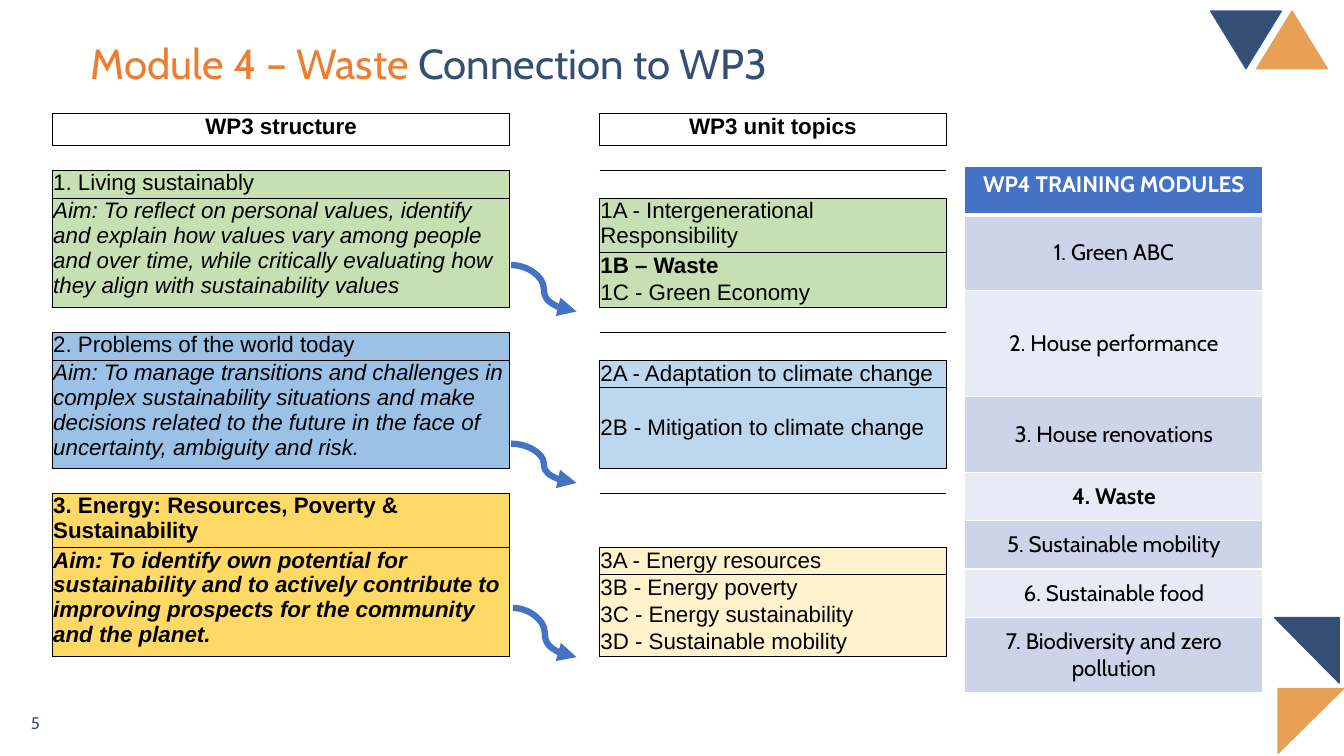
from lxml import etree
from pptx import Presentation
from pptx.dml.color import RGBColor
from pptx.enum.shapes import MSO_CONNECTOR, MSO_SHAPE
from pptx.enum.text import MSO_ANCHOR, PP_ALIGN
from pptx.oxml.ns import qn
from pptx.util import Cm, Pt

CURVE = MSO_CONNECTOR.CURVE
TRIANGLE = MSO_SHAPE.ISOSCELES_TRIANGLE
TOP, MIDDLE = MSO_ANCHOR.TOP, MSO_ANCHOR.MIDDLE
LEFT, CENTER = PP_ALIGN.LEFT, PP_ALIGN.CENTER

NAVY = RGBColor(0x35, 0x4F, 0x74)
TITLE_NAVY = RGBColor(0x34, 0x4F, 0x74)
EDGE_NAVY = RGBColor(0x31, 0x53, 0x8F)
SAND = RGBColor(0xE8, 0x9F, 0x56)
ORANGE = RGBColor(0xED, 0x7D, 0x31)
BLUE = RGBColor(0x44, 0x72, 0xC4)
GREEN = RGBColor(0xC6, 0xE0, 0xB4)
SKY = RGBColor(0x9B, 0xC2, 0xE6)
PALE_SKY = RGBColor(0xBD, 0xD7, 0xEE)
GOLD = RGBColor(0xFF, 0xD9, 0x66)
CREAM = RGBColor(0xFF, 0xF2, 0xCC)
BAND_DARK = RGBColor(0xCD, 0xD4, 0xEA)
BAND_LIGHT = RGBColor(0xE8, 0xEB, 0xF5)
BLACK = RGBColor(0, 0, 0)
WHITE = RGBColor(0xFF, 0xFF, 0xFF)

PLAIN_TABLE_STYLE = "{2D5ABB26-0587-4C30-8999-92F81FD0307C}"

# Each unit: heading, its height, aim, colours of aim and topics, bold, topics with heights
UNITS = [
    ("1. Living sustainably", 0.71,
     "Aim: To reflect on personal values, identify and explain how values vary among people "
     "and over time, while critically evaluating how they align with sustainability values",
     GREEN, GREEN, False,
     [("1A - Intergenerational Responsibility", 1.28), ("1B – Waste", 0.65),
      ("1C - Green Economy", 0.65)]),
    ("2. Problems of the world today", 0.71,
     "Aim: To manage transitions and challenges in complex sustainability situations and make "
     "decisions related to the future in the face of uncertainty, ambiguity and risk.",
     SKY, PALE_SKY, False,
     [("2A - Adaptation to climate change", 0.66), ("2B - Mitigation to climate change", 1.88)]),
    ("3. Energy: Resources, Poverty & Sustainability", 1.3,
     "Aim: To identify own potential for sustainability and to actively contribute to "
     "improving prospects for the community and the planet.",
     GOLD, CREAM, True,
     [("3A - Energy resources", 0.66), ("3B - Energy poverty", 0.66),
      ("3C - Energy sustainability", 0.66), ("3D - Sustainable mobility", 0.66)]),
]
MODULES = [
    ("1. Green ABC", 1.9), ("2. House performance", 2.69), ("3. House renovations", 1.9),
    ("4. Waste", 1.22), ("5. Sustainable mobility", 1.22), ("6. Sustainable food", 1.22),
    ("7. Biodiversity and zero pollution", 1.9),
]


def write(para, text, *, font="Arial", size=16, color=BLACK, bold=False, italic=False,
          align=LEFT):
    """Add one formatted span of text to a paragraph."""
    para.alignment = align
    span = para.add_run()
    span.text = text
    span.font.name = font
    span.font.size = Pt(size)
    span.font.color.rgb = color
    span.font.bold = bold
    span.font.italic = italic


class SlideBuilder:
    """Holds the font of the template and the page being built."""

    font = "Cabin"

    def __init__(self, deck):
        self.page = deck.slides.add_slide(deck.slide_layouts[5])

    def title(self, left, top, width, height, parts):
        box = self.page.shapes.title
        box.left, box.top, box.width, box.height = map(Cm, (left, top, width, height))
        box.text_frame.vertical_anchor = MIDDLE
        box.text_frame.word_wrap = True
        para = box.text_frame.paragraphs[0]
        para.line_spacing = 0.9
        for text, color in parts:
            write(para, text, font=self.font, size=30, color=color)

    def label(self, left, top, width, height, text):
        box = self.page.shapes.add_textbox(*map(Cm, (left, top, width, height)))
        box.text_frame.word_wrap = True
        box.text_frame.vertical_anchor = MIDDLE
        write(box.text_frame.paragraphs[0], text, font=self.font, size=12, color=NAVY)

    def triangle(self, left, top, width, height, *, tip, turn, fill, edge):
        shape = self.page.shapes.add_shape(TRIANGLE, *map(Cm, (left, top, width, height)))
        shape.adjustments[0] = tip
        shape.rotation = turn
        shape.shadow.inherit = False
        shape.fill.solid()
        shape.fill.fore_color.rgb = fill
        shape.line.color.rgb = edge
        shape.line.width = Pt(1)

    def curved_arrow(self, *ends):
        arrow = self.page.shapes.add_connector(CURVE, *map(Cm, ends))
        arrow.line.color.rgb = BLUE
        arrow.line.width = Pt(4.5)
        line = arrow.line._get_or_add_ln()
        etree.SubElement(line, qn("a:tailEnd"), type="triangle")
        etree.SubElement(arrow._element.spPr, qn("a:effectLst"))

    def table(self, left, top, widths, heights):
        frame = self.page.shapes.add_table(
            len(heights), len(widths), Cm(left), Cm(top), Cm(sum(widths)), Cm(sum(heights)))
        table = frame.table
        table.first_row = table.horz_banding = False
        table._tbl.tblPr.find(qn("a:tableStyleId")).text = PLAIN_TABLE_STYLE
        for column, width in zip(table.columns, widths):
            column.width = Cm(width)
        for row, height in zip(table.rows, heights):
            row.height = Cm(height)
        return table

    def cell(self, cell, text, *, fill, borders, anchor=TOP, margins=(0.02, 0.01, 0.02, 0),
             **style):
        """Fill a cell; borders maps the sides L, R, T, B to (colour, points)."""
        (cell.margin_left, cell.margin_top,
         cell.margin_right, cell.margin_bottom) = map(Cm, margins)
        cell.vertical_anchor = anchor
        properties = cell._tc.get_or_add_tcPr()
        for side in "LRTB":
            if side in borders:
                color, points = borders[side]
                line = etree.SubElement(properties, qn("a:ln" + side), w=str(Pt(points)))
                solid = etree.SubElement(line, qn("a:solidFill"))
                etree.SubElement(solid, qn("a:srgbClr"), val=str(color))
        if fill is None:
            cell.fill.background()
        else:
            cell.fill.solid()
            cell.fill.fore_color.rgb = fill
        para = cell.text_frame.paragraphs[0]
        if text:
            write(para, text, **style)
        else:
            etree.SubElement(para._p, qn("a:endParaRPr"), sz="1400")


def add_structure_table(slide):
    heights = [0.79]
    for _, heading_height, _, _, _, _, topics in UNITS:
        heights += [0.63, heading_height] + [height for _, height in topics]
    table = slide.table(1.32, 2.87, [11.53, 2.26, 8.74], heights)
    frame = {side: (BLACK, 0.75) for side in "LRTB"}

    def put(row, column, text, fill=None, sides="LRTB", **style):
        borders = {side: frame[side] for side in sides}
        slide.cell(table.cell(row, column), text, fill=fill, borders=borders, **style)

    put(0, 0, "WP3 structure", bold=True, align=CENTER)
    put(0, 2, "WP3 unit topics", bold=True, align=CENTER)
    for row in range(len(heights)):
        put(row, 1, "", sides="")

    row = 1
    for heading, _, aim, aim_fill, topic_fill, bold, topics in UNITS:
        first, last = row + 2, row + 1 + len(topics)
        put(row, 0, "", sides="TB")
        put(row, 2, "", sides="T")
        put(row + 1, 0, heading, aim_fill, bold=bold)
        put(row + 1, 2, "", sides="B")
        for index, (topic, _) in enumerate(topics, first):
            sides = "LR" + "T" * (index == first) + "B" * (index == last)
            anchor = MIDDLE if topic.startswith("2") else TOP
            put(index, 2, topic, topic_fill, sides, anchor=anchor, bold="Waste" in topic)
            put(index, 0, aim if index == first else "", aim_fill, bold=bold, italic=True)
        table.cell(first, 0).merge(table.cell(last, 0))
        row = last + 1


def add_module_table(slide):
    table = slide.table(24.31, 4.19, [7.52], [1.22] + [height for _, height in MODULES])
    frame = {side: (WHITE, 1) for side in "LRTB"}
    thick = (WHITE, 3)
    style = {"font": slide.font, "align": CENTER, "margins": (0.25, 0.13, 0.25, 0.13)}
    slide.cell(table.cell(0, 0), "WP4 TRAINING MODULES", fill=BLUE,
               borders={**frame, "B": thick}, color=WHITE, bold=True, **style)
    for row, (module, _) in enumerate(MODULES, 1):
        slide.cell(table.cell(row, 0), module, fill=BAND_DARK if row % 2 else BAND_LIGHT,
                   borders={**frame, "T": thick} if row == 1 else frame,
                   anchor=MIDDLE, bold="Waste" in module, **style)


def main():
    deck = Presentation()
    deck.slide_width, deck.slide_height = Cm(33.87), Cm(19.05)
    slide = SlideBuilder(deck)

    # Corner decoration and page number
    slide.label(0.53, 17.7, 7.62, 1.02, "5")
    slide.triangle(31.67, 0.28, 1.78, 1.45, tip=0.5, turn=0, fill=SAND, edge=SAND)
    slide.triangle(32.21, 17.35, 1.65, 1.63, tip=1, turn=180, fill=SAND, edge=SAND)
    slide.triangle(32.11, 15.57, 1.65, 1.63, tip=1, turn=270, fill=NAVY, edge=NAVY)
    slide.triangle(30.51, 0.28, 1.78, 1.45, tip=0.5, turn=180, fill=NAVY, edge=EDGE_NAVY)

    # Title
    slide.title(2.03, 0.64, 29.21, 2.03,
                [("Module 4 – Waste ", ORANGE), ("Connection to WP3", TITLE_NAVY)])

    # Tables, and the arrows from units to topics
    add_structure_table(slide)
    for ends in [(12.88, 6.68, 14.53, 7.85), (12.88, 11.18, 14.53, 12.17),
                 (12.93, 15.32, 14.53, 16.56)]:
        slide.curved_arrow(*ends)
    add_module_table(slide)

    deck.save("out.pptx")


if __name__ == "__main__":
    main()
